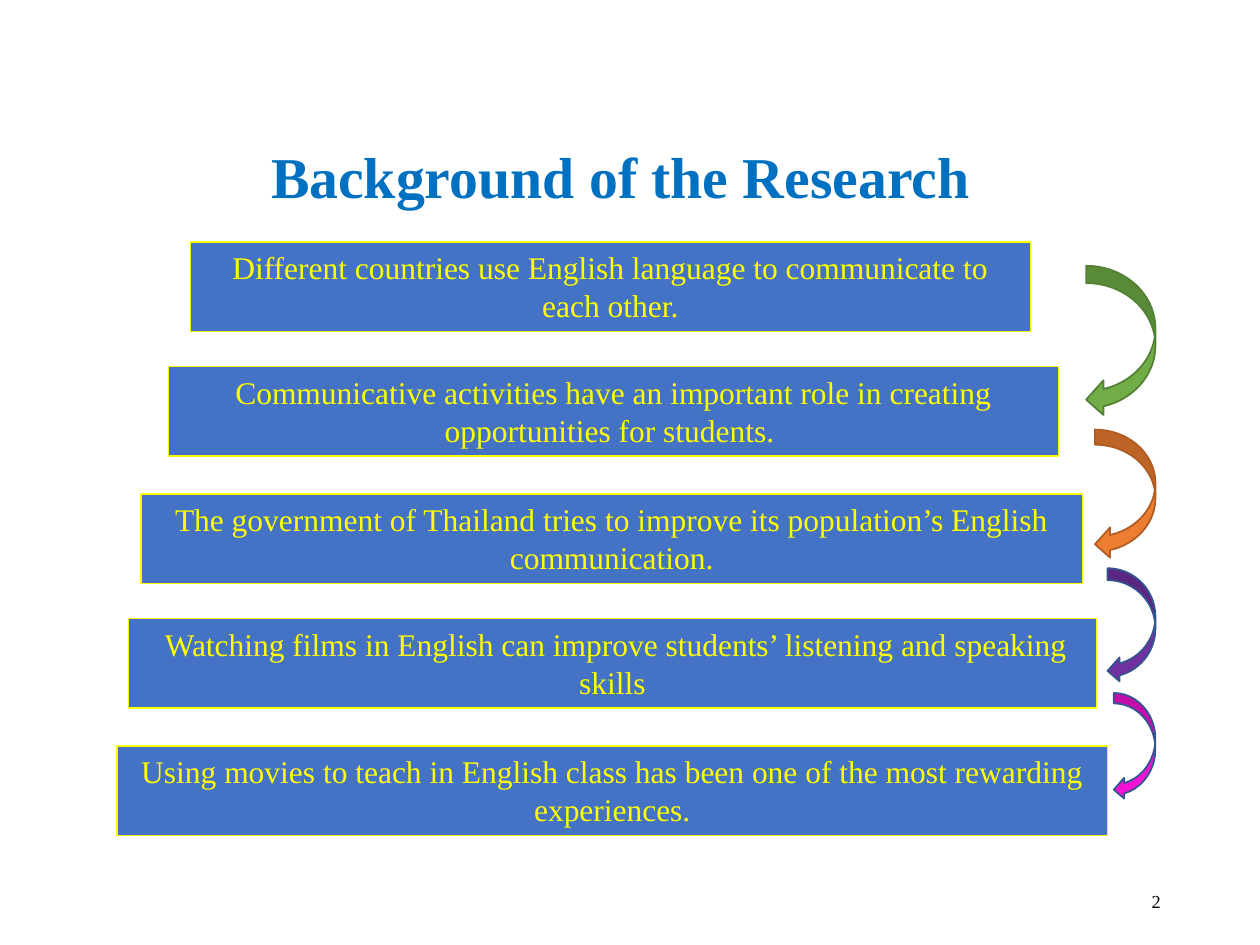
from pptx import Presentation
from pptx import util as u
from pptx.dml.color import RGBColor
from pptx.enum import shapes, text


def rgb(value):
    return RGBColor.from_string(value)


class Deck:
    font = "Times New Roman"
    box_fill, accent = "4472C4", "FFFF00"

    def __init__(self, prs):
        self.s = prs.slides.add_slide(prs.slide_layouts[6])

    def fill_text(self, tf, content, size, color, align, anchor, bold=False, spacing=None):
        tf.word_wrap = True
        tf.vertical_anchor = anchor
        p = tf.paragraphs[0]
        p.alignment = align
        if spacing:
            p.line_spacing = spacing
        r = p.add_run()
        r.text = content
        r.font.name = self.font
        r.font.size = u.Pt(size)
        r.font.bold = bold
        r.font.color.rgb = rgb(color)

    def label(self, x, y, w, h, content, size, color, align, **style):
        sp = self.s.shapes.add_textbox(*map(u.Inches, (x, y, w, h)))
        self.fill_text(sp.text_frame, content, size, color, align,
                       text.MSO_ANCHOR.MIDDLE, **style)

    def shape(self, kind, x, y, w, h, fill, line, weight):
        sp = self.s.shapes.add_shape(kind, *map(u.Inches, (x, y, w, h)))
        sp.shadow.inherit = False
        sp.fill.solid()
        sp.fill.fore_color.rgb = rgb(fill)
        sp.line.color.rgb = rgb(line)
        sp.line.width = u.Pt(weight)
        return sp

    def box(self, x, y, w, content):
        sp = self.shape(shapes.MSO_SHAPE.RECTANGLE, x, y, w, 0.71,
                        self.box_fill, self.accent, 0.75)
        self.fill_text(sp.text_frame, content, 18, self.accent,
                       text.PP_ALIGN.CENTER, text.MSO_ANCHOR.TOP)
        sp.text_frame.auto_size = text.MSO_AUTO_SIZE.SHAPE_TO_FIT_TEXT

    def arrow(self, right, y, w, h, fill, line):
        self.shape(shapes.MSO_SHAPE.CURVED_LEFT_ARROW, right - w, y, w, h,
                   fill, line, 1)


def main():
    prs = Presentation()
    prs.slide_width, prs.slide_height = u.Inches(10), u.Inches(7.5)
    deck = Deck(prs)

    # Title and page number
    deck.label(2.01, 0.94, 5.83, 0.98, "Background of the Research ", 33, "0070C0",
               text.PP_ALIGN.CENTER, bold=True, spacing=0.9)
    deck.label(7.06, 6.95, 2.25, 0.4, "2", 10.5, "000000", text.PP_ALIGN.RIGHT)

    # Widening stack of statements
    statements = [
        (1.51, 1.92, 6.67, "Different countries use English language to communicate to each other."),
        (1.34, 2.91, 7.06, "Communicative activities have an important role in creating opportunities for students. "),
        (1.12, 3.92, 7.47, "The government of Thailand tries to improve its population’s English communication."),
        (1.02, 4.91, 7.68, " Watching films in English can improve students’ listening and speaking skills"),
        (0.93, 5.92, 7.86, "Using movies to teach in English class has been one of the most rewarding experiences."),
    ]
    for statement in statements:
        deck.box(*statement)

    # Curved arrows, aligned on their right edge
    arrows = [
        (2.11, 0.55, 1.2, "70AD47", "538035"),
        (3.41, 0.48, 1.03, "ED7D31", "AF5C24"),
        (4.51, 0.38, 0.91, "7030A0", "325491"),
        (5.5, 0.33, 0.85, "F612D5", "325491"),
    ]
    for arrow in arrows:
        deck.arrow(9.17, *arrow)

    prs.save("out.pptx")


if __name__ == "__main__":
    main()
